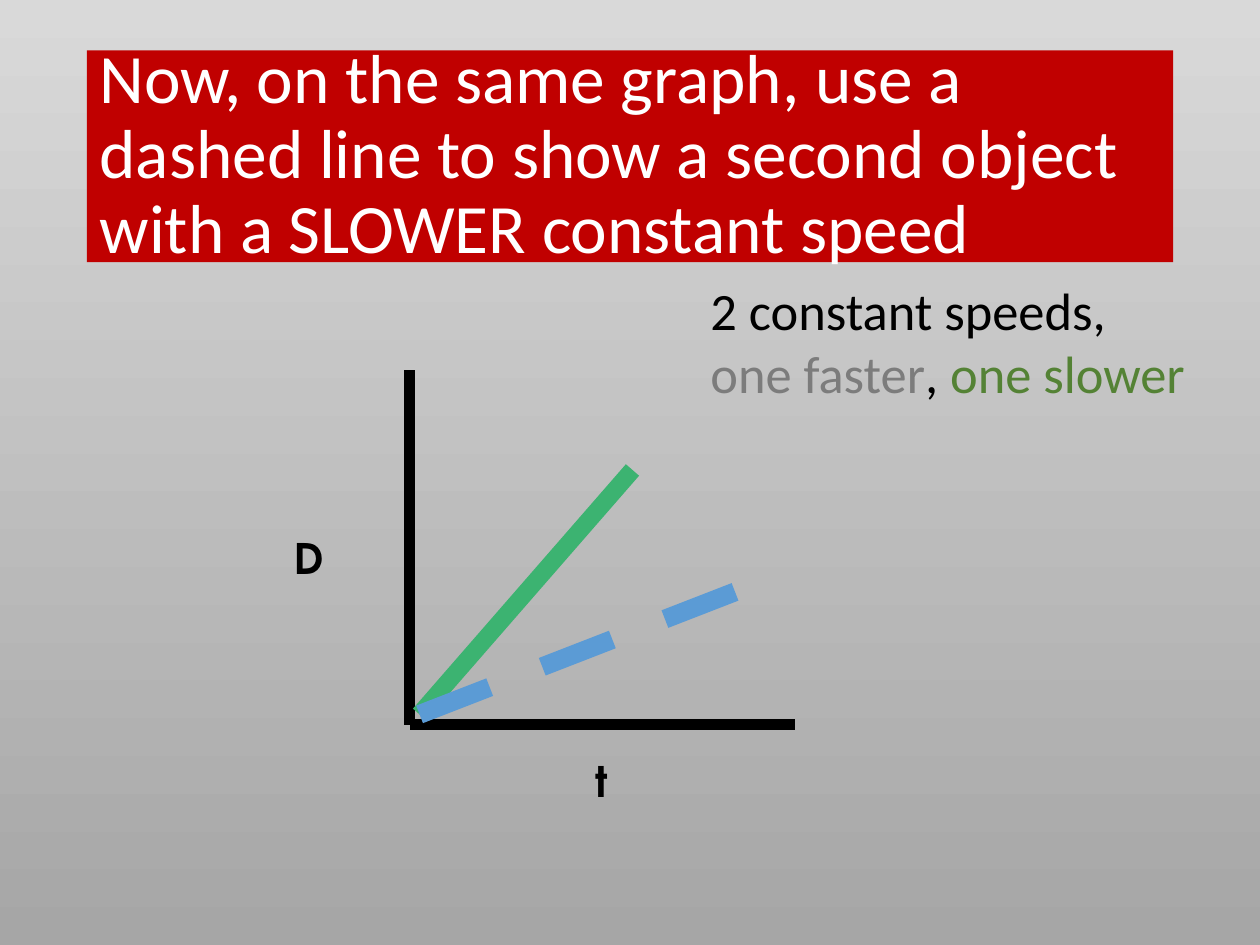
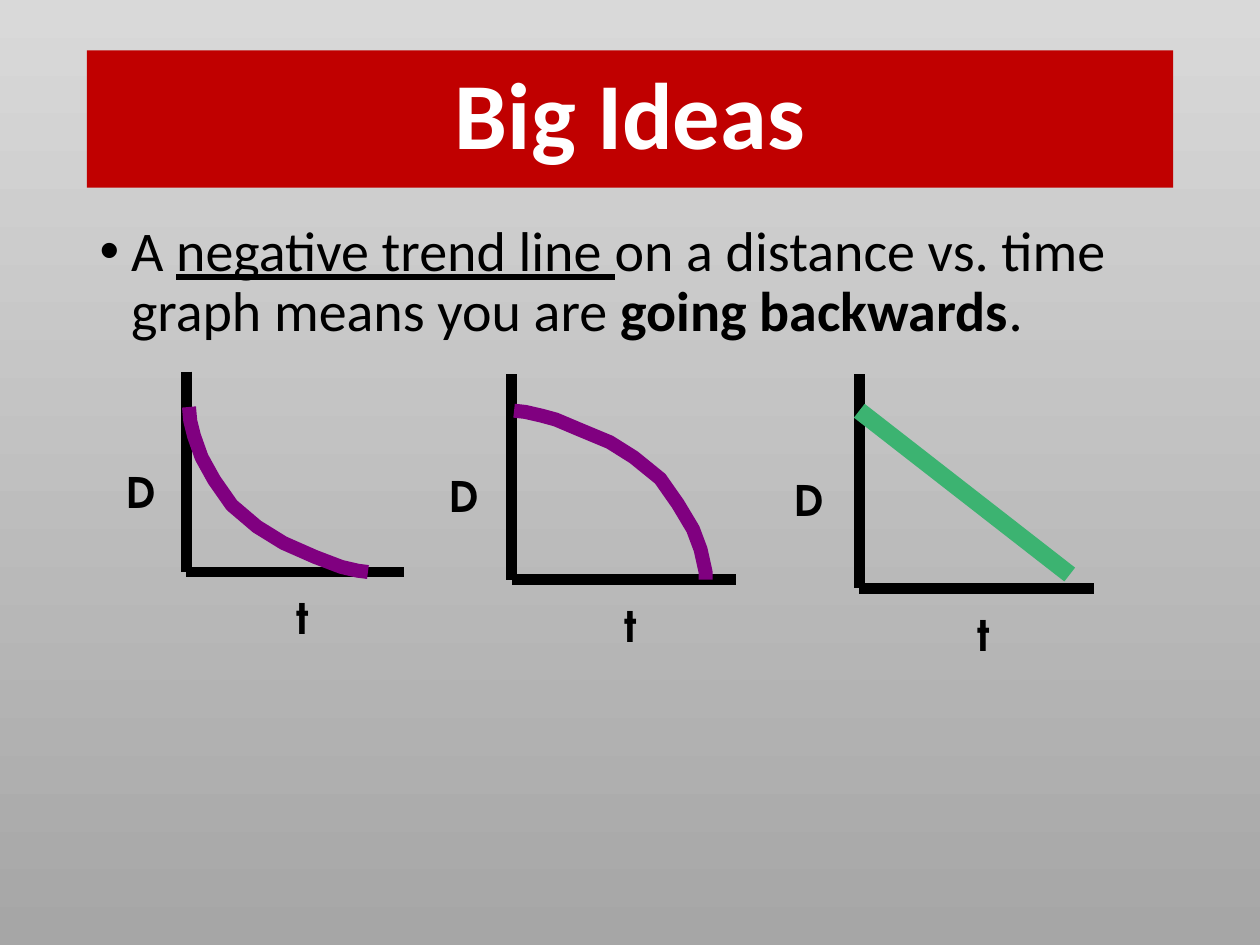
import pptx
import pptx.dml.color
import pptx.enum.dml
import pptx.enum.shapes
import pptx.enum.text
import pptx.oxml
import pptx.util

Inches, Pt = pptx.util.Inches, pptx.util.Pt
ALIGN = pptx.enum.text.PP_ALIGN

# Shared style
TEXT_FONT, LABEL_FONT = "Calibri", "TeX Gyre Adventor"
BLACK, WHITE, BAND = "000000", "FFFFFF", "C00000"
BACKGROUND = ("D9D9D9", "A6A6A6")
STEADY, SLOWER, CURVED = "3CB371", "5B9BD5", "800080"
FAST_WORDS, SLOW_WORDS = "7C7C7C", "548235"
MARGIN, CONTENT_WIDTH = 0.69, 8.62

# Distance-time curves, as points in inches
SLOWING_DOWN = [(1.5, 3.23), (1.51, 3.34), (1.54, 3.46), (1.6, 3.63),
                (1.7, 3.81), (1.84, 4.01), (2.04, 4.18), (2.25, 4.31),
                (2.5, 4.42), (2.71, 4.5), (2.84, 4.53), (2.92, 4.54)]
SPEEDING_UP = [(4.08, 3.26), (4.17, 3.27), (4.3, 3.3), (4.41, 3.33),
               (4.6, 3.41), (4.84, 3.51), (5.03, 3.63), (5.24, 3.8),
               (5.38, 4.0), (5.5, 4.2), (5.56, 4.36), (5.6, 4.54), (5.6, 4.6)]


def rgb(color):
    return pptx.dml.color.RGBColor.from_string(color)


class Deck:
    """Holds the style of the lesson and the slide being built."""

    def __init__(self):
        self.presentation = pptx.Presentation()
        self.presentation.slide_width = Inches(10)
        self.presentation.slide_height = Inches(7.5)
        self.slide = None
        backdrop = self.presentation.slide_master.background.fill
        backdrop.gradient()
        backdrop.gradient_angle = 270
        for stop, color in zip(backdrop.gradient_stops, BACKGROUND):
            stop.color.rgb = rgb(color)

    def new_slide(self, layout):
        layouts = self.presentation.slide_layouts
        self.slide = self.presentation.slides.add_slide(layouts.get_by_name(layout))

    def place(self, shape, left, top, width, height):
        shape.left, shape.top = Inches(left), Inches(top)
        shape.width, shape.height = Inches(width), Inches(height)

    def add_runs(self, paragraph, runs, size, font=TEXT_FONT, color=BLACK):
        """Each run is (text, changes), where changes may set color, bold, underline."""
        for text, changes in runs:
            run = paragraph.add_run()
            run.text = text
            run.font.name, run.font.size = font, Pt(size)
            run.font.color.rgb = rgb(changes.get("color", color))
            run.font.bold = changes.get("bold", False)
            run.font.underline = changes.get("underline", False)

    def title(self, text, height, size, align=ALIGN.LEFT, bold=False):
        title = self.slide.shapes.title
        self.place(title, MARGIN, 0.4, CONTENT_WIDTH, height)
        title.fill.solid()
        title.fill.fore_color.rgb = rgb(BAND)
        frame = title.text_frame
        frame.auto_size = pptx.enum.text.MSO_AUTO_SIZE.NONE
        frame.vertical_anchor = pptx.enum.text.MSO_ANCHOR.MIDDLE
        paragraph = frame.paragraphs[0]
        paragraph.alignment, paragraph.line_spacing = align, 0.9
        self.add_runs(paragraph, [(text, {"bold": bold})], size, color=WHITE)

    def bullet(self, runs):
        body = self.slide.placeholders[1]
        self.place(body, MARGIN, 1.72, CONTENT_WIDTH, 5.03)
        body.text_frame.auto_size = pptx.enum.text.MSO_AUTO_SIZE.NONE
        paragraph = body.text_frame.paragraphs[0]
        paragraph.line_spacing, paragraph.space_before = 0.9, Pt(10)
        properties = paragraph._p.get_or_add_pPr()
        properties.set("marL", str(Inches(0.25)))
        properties.set("indent", str(-Inches(0.25)))
        self.add_runs(paragraph, runs, 32)

    def text(self, parent, left, top, width, height, runs, size, font=TEXT_FONT):
        box = parent.shapes.add_textbox(
            Inches(left), Inches(top), Inches(width), Inches(height))
        box.text_frame.word_wrap = True
        box.text_frame.auto_size = pptx.enum.text.MSO_AUTO_SIZE.SHAPE_TO_FIT_TEXT
        self.add_runs(box.text_frame.paragraphs[0], runs, size, font)

    def line(self, parent, start, end, color, width, dashed=False):
        line = parent.shapes.add_connector(
            pptx.enum.shapes.MSO_CONNECTOR.STRAIGHT,
            *(Inches(value) for value in (*start, *end)))
        line.line.color.rgb = rgb(color)
        line.line.width = Pt(width)
        if dashed:
            line.line.dash_style = pptx.enum.dml.MSO_LINE.DASH
        line._element.spPr.append(pptx.oxml.parse_xml(
            '<a:effectLst xmlns:a='
            '"http://schemas.openxmlformats.org/drawingml/2006/main"/>'))

    def curve(self, parent, points):
        start, *rest = [(Inches(x), Inches(y)) for x, y in points]
        builder = parent.shapes.build_freeform(*start)
        builder.add_line_segments(rest, close=False)
        curve = builder.convert_to_shape()
        curve.shadow.inherit = False
        curve.fill.background()
        curve.line.color.rgb = rgb(CURVED)
        curve.line.width = Pt(8)

    def graph(self, left, top, width, height):
        """Draws the D and t axes; labels scale with the axes. Returns the group."""
        group = self.slide.shapes.add_group_shape()
        base = top + height
        self.line(group, (left, top), (left, base), BLACK, 6)
        self.line(group, (left, base), (left + width, base), BLACK, 6)
        labels = {"D": (left - 0.33 * width, top + 0.44 * height),
                  "t": (left + 0.45 * width, base + 0.07 * height)}
        for letter, (x, y) in labels.items():
            self.text(group, x, y, 0.12 * width, 0.18 * height,
                      [(letter, {"bold": True})], 24, LABEL_FONT)
        return group


def main():
    deck = Deck()

    # Two constant speeds on one graph
    deck.new_slide("Title Only")
    deck.title("Now, on the same graph, use a dashed line to show a second object "
               "with a SLOWER constant speed", 1.68, 39.6)
    speeds = deck.graph(3.25, 2.94, 3.06, 2.81)
    deck.line(speeds, (3.33, 5.67), (5.02, 3.73), STEADY, 10)
    deck.line(speeds, (3.33, 5.67), (5.93, 4.66), SLOWER, 10.75, dashed=True)
    deck.text(deck.slide, 5.54, 2.16, 4, 1.11, [
        ("2 constant speeds, ", {}),
        ("one faster", {"color": FAST_WORDS}),
        (", ", {}),
        ("one slower", {"color": SLOW_WORDS})], 30)

    # Three ways of going backwards
    deck.new_slide("Title and Content")
    deck.title("Big Ideas", 1.09, 54, ALIGN.CENTER, bold=True)
    deck.bullet([
        ("A ", {}),
        ("negative trend line ", {"underline": True}),
        ("on a distance vs. time graph means you are ", {}),
        ("going backwards", {"bold": True}),
        (".", {})])
    deck.curve(deck.graph(1.48, 2.95, 1.73, 1.59), SLOWING_DOWN)
    deck.curve(deck.graph(4.06, 2.97, 1.78, 1.63), SPEEDING_UP)
    steady = deck.graph(6.82, 2.97, 1.86, 1.7)
    deck.line(steady, (6.82, 3.26), (8.49, 4.56), STEADY, 10)

    deck.presentation.save("out.pptx")


if __name__ == "__main__":
    main()
